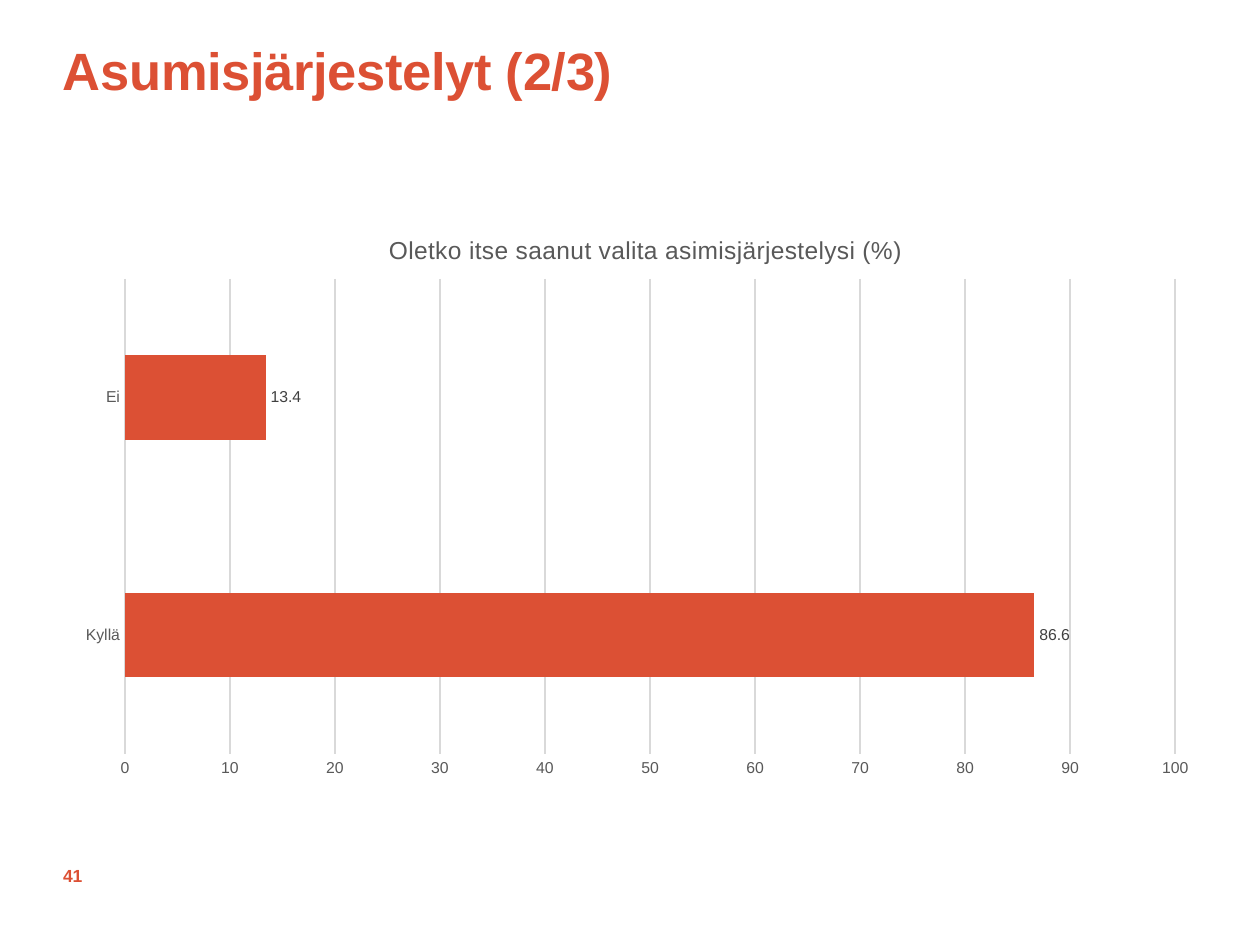
from lxml import etree
from pptx import Presentation
from pptx import util as u
from pptx.chart.data import CategoryChartData
from pptx.dml.color import RGBColor
from pptx.enum import chart as charts, text
from pptx.oxml import parse_xml
from pptx.oxml.ns import nsdecls, qn

TITLE = "Asumisjärjestelyt (2/3)"
PAGE_NUMBER = "41"
QUESTION = "Oletko itse saanut valita asimisjärjestelysi (%)"
ANSWERS = {"Kyllä": 86.6, "Ei": 13.4}

ACCENT, GRID, GREY, DARK = "DC5034", "D9D9D9", "595959", "404040"
MARGIN = 0.5
# Shares of the chart frame
TITLE_PLACE = {"x": 0.28, "y": 0.04}
PLOT_PLACE = {"x": 0.054, "y": 0.124, "w": 0.915, "h": 0.816}


def color(value):
    return RGBColor.from_string(value)


def style(font, size, value, bold=False):
    font.name, font.size, font.bold = "Arial", u.Pt(size), bold
    font.color.rgb = color(value)


def add_text(page, words, place, size, anchor, spacing=0):
    box = page.shapes.add_textbox(*map(u.Inches, place))
    frame = box.text_frame
    frame.text = words
    frame.word_wrap = True
    frame.vertical_anchor = anchor
    frame.margin_left = frame.margin_right = 0
    frame.margin_top = frame.margin_bottom = 0
    span = frame.paragraphs[0].runs[0]
    style(span.font, size, ACCENT, True)
    span.font._element.set("spc", str(spacing))


def manual_layout(place, inner=False):
    """Return a c:layout element placed by shares of the chart frame."""
    layout = parse_xml(f"<c:layout {nsdecls('c')}><c:manualLayout/></c:layout>")
    settings = [("layoutTarget", "inner")] if inner else []
    settings += [(f"{key}Mode", "edge") for key in "xy"]
    settings += list(place.items())
    for name, value in settings:
        etree.SubElement(layout[0], qn(f"c:{name}")).set("val", str(value))
    return layout


def add_bar_chart(page, place):
    data = CategoryChartData()
    data.categories = list(ANSWERS)
    data.add_series("Series 1", list(ANSWERS.values()))
    chart = page.shapes.add_chart(
        charts.XL_CHART_TYPE.BAR_CLUSTERED, *map(u.Inches, place), data).chart
    style(chart.font, 10, "000000")
    chart.has_legend = False

    chart.has_title = True
    title = chart.chart_title
    title.text_frame.text = QUESTION
    span = title.text_frame.paragraphs[0].runs[0]
    style(span.font, 14, GREY)
    span.font._element.set("spc", "10")
    title.include_in_layout = False
    for part, layout in (
        (title._element, manual_layout(TITLE_PLACE)),
        (chart._chartSpace.chart.plotArea, manual_layout(PLOT_PLACE, True)),
    ):
        for old in part.findall(qn("c:layout")):
            part.remove(old)
        rich = part.find(qn("c:tx"))
        part.insert(0 if rich is None else 1, layout)

    for axis in (chart.category_axis, chart.value_axis):
        axis.major_tick_mark = axis.minor_tick_mark = charts.XL_TICK_MARK.NONE
        style(axis.tick_labels.font, 9, GREY)
    values = chart.value_axis
    values.minimum_scale, values.maximum_scale, values.major_unit = 0, 100, 10
    values.has_major_gridlines = True
    values.format.line.fill.background()
    for line in (chart.category_axis.format.line, values.major_gridlines.format.line):
        line.color.rgb = color(GRID)
        line.width = u.Pt(0.75)

    plot = chart.plots[0]
    plot.gap_width = 182
    plot.vary_by_categories = False
    bars = plot.series[0]
    bars.format.fill.solid()
    bars.format.fill.fore_color.rgb = color(ACCENT)
    labels = bars.data_labels
    labels.show_value = True
    labels.position = charts.XL_LABEL_POSITION.OUTSIDE_END
    style(labels.font, 9, DARK)


def main():
    deck = Presentation()
    deck.slide_width, deck.slide_height = u.Inches(10), u.Inches(7.5)
    page = deck.slides.add_slide(deck.slide_layouts[6])
    add_text(page, TITLE, (MARGIN, 0.3, 9, 1.16), 30, text.MSO_ANCHOR.TOP, -20)
    add_bar_chart(page, (MARGIN, 1.64, 9.11, 4.62))
    add_text(page, PAGE_NUMBER, (MARGIN, 6.75, 0.71, 0.4), 10, text.MSO_ANCHOR.MIDDLE)
    deck.save("out.pptx")


if __name__ == "__main__":
    main()
